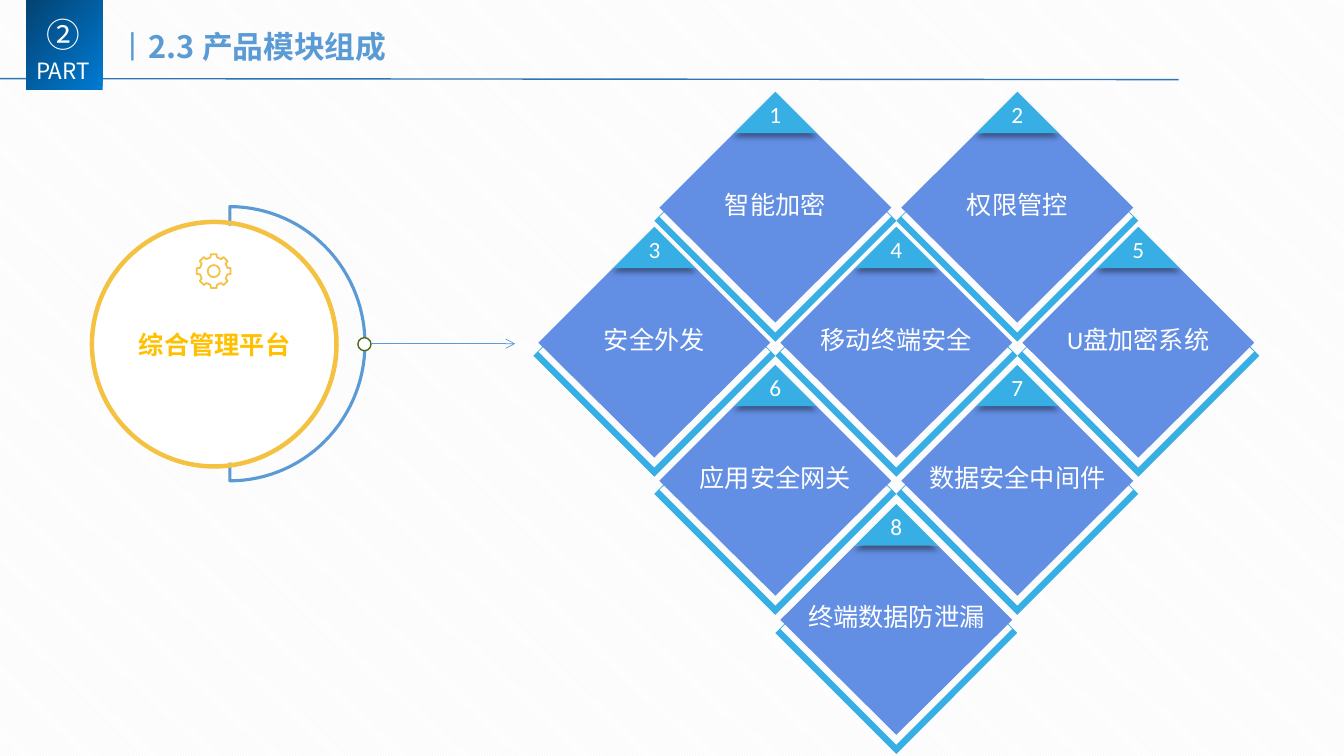
"""Build the product module slide: a platform hub and eight diamond modules."""
import math

import lxml.etree
import pptx
import pptx.dml.color
import pptx.enum.dml
import pptx.enum.shapes
import pptx.enum.text
import pptx.oxml.ns
import pptx.util

PX = 9144
HUES = {
    "white": "FFFFFF", "weave": "F2F2F2", "sky": "37AFE5", "tile": "628EE3",
    "rule": "2E75B6", "title": "5B9BD5", "light": "007BD3", "dark": "034373",
    "gold": "F5C140", "amber": "FFC000", "moss": "526814", "black": "000000",
}
LATIN, HAN = "Calibri", "Noto Sans CJK SC"
ROWS = [
    (91, 769, ["智能加密", "权限管控"]),
    (225, 649, ["安全外发", "移动终端安全", "U盘加密系统"]),
    (362, 769, ["应用安全网关", "数据安全中间件"]),
    (500, 889, ["终端数据防泄漏"]),
]
STEP = 240
FRAME = [(-43, 51), (-120, 128), (0, 248), (120, 128), (43, 51),
         (41, 51), (115, 124), (0, 239), (-115, 124), (-41, 51)]
TILE = [(-41, 41), (41, 41), (115, 115), (0, 229), (-115, 115)]
TAG = [(0, 0), (41, 41), (-41, 41)]
KINDS = pptx.enum.shapes.MSO_SHAPE
ALIGN = pptx.enum.text.PP_ALIGN
ANCHOR = pptx.enum.text.MSO_ANCHOR


def hue(name):
    return pptx.dml.color.RGBColor.from_string(HUES[name])


def node(parent, tag, **attrs):
    return lxml.etree.SubElement(parent, pptx.oxml.ns.qn(tag), **attrs)


def paint(shape, fill=None, line=None, width=1):
    shape.shadow.inherit = False
    if fill:
        shape.fill.solid()
        shape.fill.fore_color.rgb = hue(fill)
    else:
        shape.fill.background()
    if line:
        shape.line.color.rgb = hue(line)
        shape.line.width = pptx.util.Pt(width)
    else:
        shape.line.fill.background()
    return shape


def shade(shape):
    effects = shape._element.spPr.find(pptx.oxml.ns.qn("a:effectLst"))
    cast = node(effects, "a:outerShdw", blurRad="50800", dist="38100",
                dir="5400000", algn="t", rotWithShape="0")
    tint = node(cast, "a:srgbClr", val=HUES["black"])
    node(tint, "a:alpha", val="40000")


def write(shape, text, size=18, color="white", font=HAN, bold=False,
          align=ALIGN.CENTER, anchor=ANCHOR.TOP, pads=(10, 5, 10, 5)):
    frame = shape.text_frame
    frame.word_wrap = True
    frame.vertical_anchor = anchor
    (frame.margin_left, frame.margin_top,
     frame.margin_right, frame.margin_bottom) = [pad * PX for pad in pads]
    line = frame.paragraphs[0]
    line.alignment = align
    run = line.add_run()
    run.text = text
    run.font.size = pptx.util.Pt(size)
    run.font.bold = bold
    run.font.color.rgb = hue(color)
    run.font.name = font
    node(run._r.get_or_add_rPr(), "a:ea", typeface=HAN)


def label(shapes, box, text, **style):
    write(shapes.add_textbox(*[side * PX for side in box]), text, **style)


def preset(shapes, kind, box, **style):
    return paint(shapes.add_shape(kind, *[side * PX for side in box]), **style)


def outline(shapes, points, x=0, y=0, **style):
    spots = [((x + dx) * PX, (y + dy) * PX) for dx, dy in points]
    pen = shapes.build_freeform(*spots[0])
    pen.add_line_segments(spots[1:], close=True)
    return paint(pen.convert_to_shape(), **style)


def link(shapes, ends, color, width, arrow=False):
    line = shapes.add_connector(pptx.enum.shapes.MSO_CONNECTOR.STRAIGHT,
                                *[end * PX for end in ends])
    line.line.color.rgb = hue(color)
    line.line.width = pptx.util.Pt(width)
    if arrow:
        node(line.line._get_or_add_ln(), "a:tailEnd", type="arrow")
    node(line._element.spPr, "a:effectLst")


def polar(radius, angle):
    turn = math.radians(angle)
    return radius * math.cos(turn), radius * math.sin(turn)


def module(shapes, x, y, number, name):
    parts = shapes.add_group_shape().shapes
    outline(parts, FRAME, x, y, fill="sky")
    tile = outline(parts, TILE, x, y, fill="tile")
    write(tile, name, font=LATIN, anchor=ANCHOR.MIDDLE, pads=(10, 5, 10, 51))
    tag = outline(parts, TAG, x, y, fill="sky")
    shade(tag)
    write(tag, str(number), size=16.6, font=LATIN, anchor=ANCHOR.BOTTOM,
          pads=(10, 8, 10, 5))


def gear(shapes, x, y):
    teeth = [polar(radius, turn + shift) for turn in range(0, 360, 45)
             for radius, shift in ((14, -13), (17, -10), (17, 10), (14, 13))]
    outline(shapes, teeth, x, y, line="gold", width=1.25)
    preset(shapes, KINDS.OVAL, (x - 6, y - 6, 12, 12), line="gold", width=1.25)


def header(slide):
    shapes = slide.shapes
    title = shapes.title
    title.left, title.top, title.width, title.height = [
        side * PX for side in (107, 22, 533, 47)]
    for text, bold in (("丨", False), ("2.3 产品模块组成", True)):
        write(title, text, size=22, color="title", bold=bold, align=ALIGN.LEFT)
    link(shapes, (0, 78, 1169, 79), "rule", 1)
    badge = preset(shapes, KINDS.RECTANGLE, (26, 0, 76, 89))
    badge.fill.gradient()
    badge.fill.gradient_angle = 140
    for stop, name, spot in zip(badge.fill.gradient_stops, ("light", "dark"), (0, 1)):
        stop.color.rgb = hue(name)
        stop.position = spot
    label(shapes, (33, 9, 60, 50), "②", size=24)
    label(shapes, (6, 52, 113, 37), "PART", size=16)


def hub(shapes):
    arc = [polar(1, angle) for angle in range(-90, 91, 3)]
    outline(shapes, [(134 * dx, 136 * dy) for dx, dy in arc], 228, 341,
            line="title", width=2.25)
    ring = preset(shapes, KINDS.DONUT, (89, 218, 247, 247), fill="gold")
    ring.adjustments[0] = 0.018
    preset(shapes, KINDS.OVAL, (94, 223, 237, 237), fill="white")
    preset(shapes, KINDS.OVAL, (355, 335, 13, 13), fill="white", line="moss")
    gear(shapes, 212, 269)
    label(shapes, (128, 322, 202, 40), "综合管理平台", color="amber",
          bold=True, align=ALIGN.LEFT)
    link(shapes, (368, 341, 511, 341), "title", 0.5, arrow=True)


def main():
    deck = pptx.Presentation()
    deck.slide_width = 1333 * PX
    deck.slide_height = 750 * PX
    slide = deck.slides.add_slide(deck.slide_layouts[5])
    back = slide.background.fill
    back.patterned()
    back.pattern = pptx.enum.dml.MSO_PATTERN.LIGHT_DOWNWARD_DIAGONAL
    back.fore_color.rgb = hue("weave")
    back.back_color.rgb = hue("white")
    number = 0
    for y, x, names in ROWS:
        for column, name in enumerate(names):
            number += 1
            module(slide.shapes, x + column * STEP, y, number, name)
    header(slide)
    hub(slide.shapes)
    deck.save("out.pptx")


if __name__ == "__main__":
    main()
